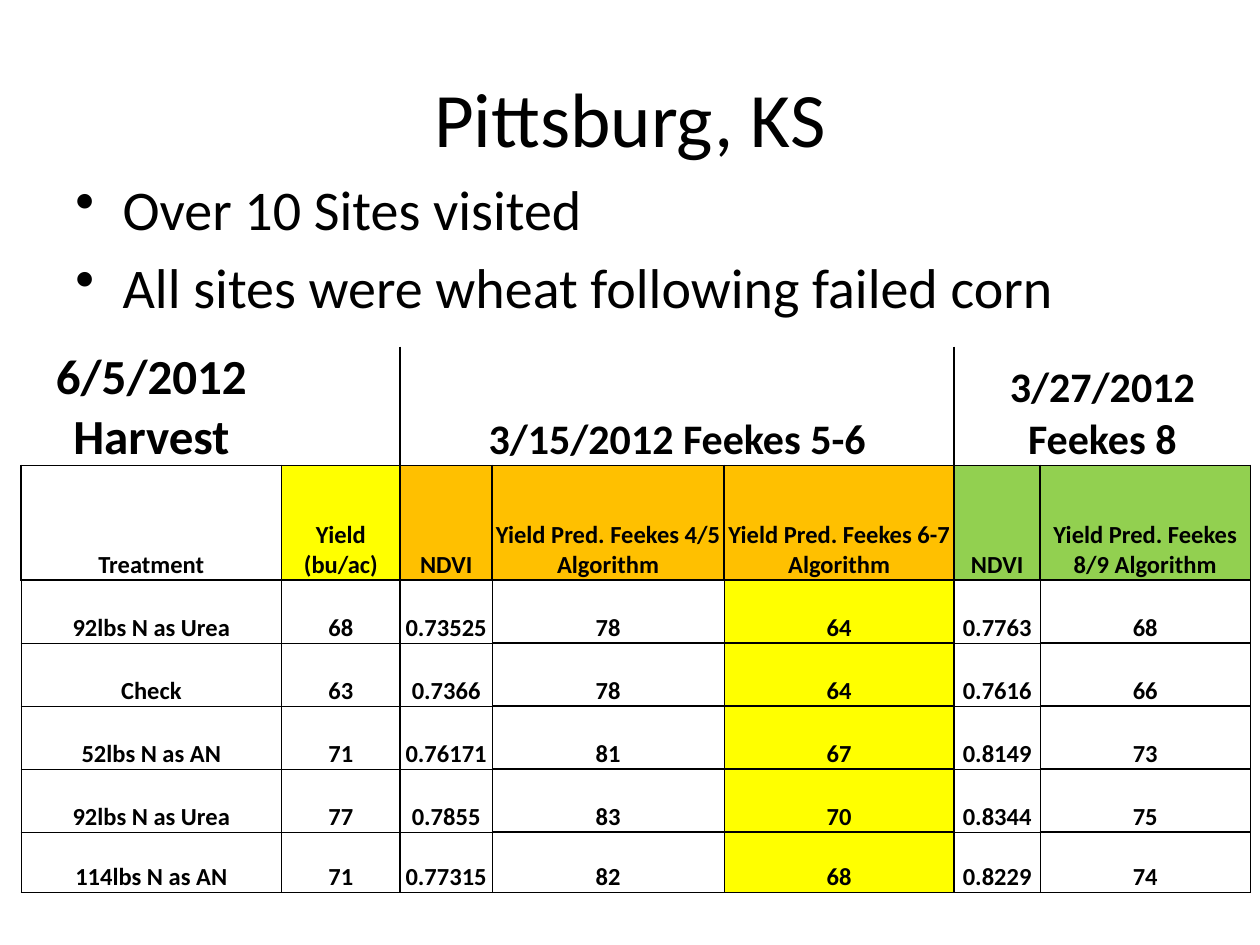
import pptx
import pptx.dml.color
import pptx.enum.text
import pptx.oxml
import pptx.oxml.ns
import pptx.util

Pt = pptx.util.Pt
RGB = pptx.dml.color.RGBColor.from_string
ALIGN = pptx.enum.text.PP_ALIGN
ANCHOR = pptx.enum.text.MSO_ANCHOR

THEME = {
    "font": "Calibri", "ink": "000000",
    "yellow": "FFFF00", "orange": "FFC000", "green": "92D050",
    "title": 44, "body": 32, "harvest": 28, "group": 24, "cell": 14,
}

TITLE = "Pittsburg, KS"
POINTS = ["Over 10 Sites visited", "All sites were wheat following failed corn"]
# text, first column, column span, size
GROUPS = [
    ("6/5/2012 Harvest", 0, 1, "harvest"),
    ("3/15/2012 Feekes 5-6", 2, 3, "group"),
    ("3/27/2012 Feekes 8", 5, 2, "group"),
]
# text, column width, header fill
HEADS = [
    ("Treatment", 149, None),
    ("Yield (bu/ac)", 67.7, "yellow"),
    ("NDVI", 52.6, "orange"),
    ("Yield Pred. Feekes 4/5 Algorithm", 132.5, "orange"),
    ("Yield Pred. Feekes 6-7 Algorithm", 131.6, "orange"),
    ("NDVI", 49, "green"),
    ("Yield Pred. Feekes 8/9 Algorithm", 120.2, "green"),
]
DATA = [
    ("92lbs N as Urea", "68", "0.73525", "78", "64", "0.7763", "68"),
    ("Check", "63", "0.7366", "78", "64", "0.7616", "66"),
    ("52lbs N as AN", "71", "0.76171", "81", "67", "0.8149", "73"),
    ("92lbs N as Urea", "77", "0.7855", "83", "70", "0.8344", "75"),
    ("114lbs N as AN", "71", "0.77315", "82", "68", "0.8229", "74"),
]
HEIGHTS = [48.2, 65.5, 36, 36, 36, 36, 34.5]
BEST = 4            # column marked in yellow
PREDS = (3, 4, 6)   # columns of predicted yield
SPLITS = (2, 5)     # column edges between the dates


def write(frame, lines, size, bold=False, align=ALIGN.CENTER, bullet=False):
    """Fill a text frame or a cell's frame, one paragraph a line."""
    frame.word_wrap = True
    for i, line in enumerate(lines):
        para = frame.add_paragraph() if i else frame.paragraphs[0]
        para.alignment = align
        run = para.add_run()
        run.text = line
        font = run.font
        font.name, font.size, font.bold = THEME["font"], Pt(THEME[size]), bold
        font.color.rgb = RGB(THEME["ink"])
        if bullet:
            para.space_before = Pt(6.4)
            props = para._p.get_or_add_pPr()
            props.set("marL", str(Pt(27)))
            props.set("indent", str(Pt(-27)))
            mark = pptx.oxml.parse_xml(
                f'<a:buChar {pptx.oxml.ns.nsdecls("a")} char="•"/>')
            props.append(mark)


def box(slide, left, top, width, height, anchor):
    shape = slide.shapes.add_textbox(Pt(left), Pt(top), Pt(width), Pt(height))
    shape.text_frame.vertical_anchor = anchor
    return shape.text_frame


def upright(row, edge):
    """Width of the vertical line at a column edge."""
    if edge in SPLITS:
        return 1.5
    if row == 0:
        return 0
    return 1 if row == 1 and edge != 1 else 0.5


def level(edge, col):
    """Width of the horizontal line at a row edge."""
    if edge == 0:
        return 0
    if edge <= 2:
        return 1
    return 1 if col in PREDS and edge < len(HEIGHTS) else 0.5


def rule(cell, row, col):
    """Draw the four borders of a cell."""
    props = cell._tc.get_or_add_tcPr()
    sides = {"L": upright(row, col), "R": upright(row, col + 1),
             "T": level(row, col), "B": level(row + 1, col)}
    for side, width in sides.items():
        paint = "<a:noFill/>"
        if width:
            paint = f'<a:solidFill><a:srgbClr val="{THEME["ink"]}"/></a:solidFill>'
        props.append(pptx.oxml.parse_xml(
            f'<a:ln{side} {pptx.oxml.ns.nsdecls("a")} w="{Pt(width)}">'
            f'{paint}</a:ln{side}>'))


def style(cell, row, col):
    cell.margin_left = cell.margin_right = cell.margin_top = Pt(0.7)
    cell.margin_bottom = 0
    cell.vertical_anchor = ANCHOR.BOTTOM
    rule(cell, row, col)
    color = None
    if row == 1:
        color = HEADS[col][2]
    elif row > 1 and col == BEST:
        color = "yellow"
    if color:
        cell.fill.solid()
        cell.fill.fore_color.rgb = RGB(THEME[color])
    else:
        cell.fill.background()


def grid(slide):
    """Add the table of yields."""
    widths = [head[1] for head in HEADS]
    table = slide.shapes.add_table(
        len(HEIGHTS), len(HEADS), Pt(12), Pt(198),
        Pt(sum(widths)), Pt(sum(HEIGHTS))).table
    table.first_row = table.horz_banding = False
    for col, width in enumerate(widths):
        table.columns[col].width = Pt(width)
    for row, height in enumerate(HEIGHTS):
        table.rows[row].height = Pt(height)
        for col in range(len(HEADS)):
            style(table.cell(row, col), row, col)
    for text, col, span, size in GROUPS:
        cell = table.cell(0, col)
        if span > 1:
            cell.merge(table.cell(0, col + span - 1))
        write(cell.text_frame, [text], size, bold=True)
    for row, texts in enumerate([[head[0] for head in HEADS], *DATA], 1):
        for col, text in enumerate(texts):
            write(table.cell(row, col).text_frame, [text], "cell", bold=True)


def main():
    deck = pptx.Presentation()
    deck.slide_width, deck.slide_height = Pt(720), Pt(540)
    slide = deck.slides.add_slide(deck.slide_layouts[6])
    write(box(slide, 36, 21.6, 648, 90, ANCHOR.MIDDLE), [TITLE], "title")
    write(box(slide, 36, 96, 648, 102, ANCHOR.TOP), POINTS, "body",
          align=ALIGN.LEFT, bullet=True)
    grid(slide)
    deck.save("out.pptx")


if __name__ == "__main__":
    main()
